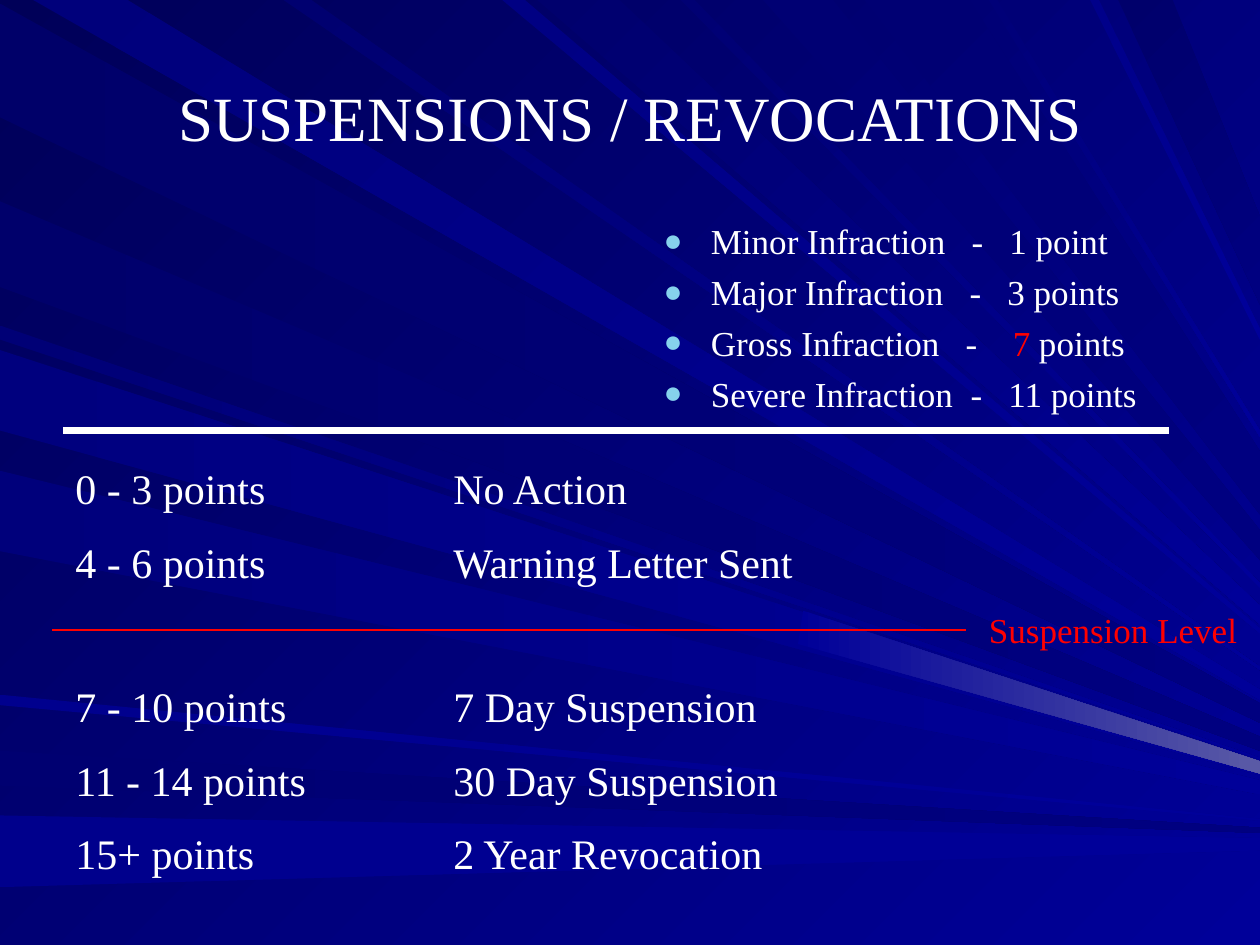
"""Build the suspensions and revocations slide on a blue light-ray background."""
from lxml import etree
from pptx import Presentation
from pptx.dml.color import RGBColor
from pptx.enum.shapes import MSO_CONNECTOR
from pptx.enum.text import MSO_ANCHOR, PP_ALIGN
from pptx.oxml.ns import qn
from pptx.util import Pt

STRAIGHT = MSO_CONNECTOR.STRAIGHT
CENTER, LEFT = PP_ALIGN.CENTER, PP_ALIGN.LEFT
MIDDLE, TOP = MSO_ANCHOR.MIDDLE, MSO_ANCHOR.TOP

THEME = {
    "font": "Times New Roman",
    "text": "FFFFFF", "alert": "FF0000", "bullet": "86D1EC",
    "night": "000058", "navy": "000080", "blue": "000099", "glow": "5A5AA6",
    "title_size": 36, "row_size": 24, "list_size": 20,
}
WIDTH, HEIGHT = 720, 540
FOCUS_X, FOCUS_Y = 864, 482

TOP_RAYS = [
    (19, 73, "00007B", "blue"), (162, 178, "000070", "blue"),
    (287, 300, "000083", "blue"), (307, 354, "00006D", "blue"),
    (389, 397, "000073", "blue"), (436, 476, "000073", "navy"),
    (494, 554, "000073", "navy"), (565, 570, "000078", "blue"),
    (623, 628, "00008A", "blue"), (639, 670, "00006B", "navy"),
]
LEFT_RAYS = [
    (2, 67, "000069", "navy"), (115, 164, "00006B", "navy"),
    (186, 194, "000076", "blue"), (200, 246, "00007E", "blue"),
    (269, 315, "00007B", "blue"), (397, 403, "00008E", "blue"),
    (429, 449, "000071", "navy"), (466, 507, "00008C", "blue"),
]
INFRACTIONS = [
    ("Minor Infraction   -   1 point",),
    ("Major Infraction   -   3 points",),
    ("Gross Infraction   -    ", "7", " points"),
    ("Severe Infraction  -   11 points",),
]
PENALTIES = [
    ("0 - 3 points", "No Action", 0),
    ("4 - 6 points", "Warning Letter Sent", 13.3),
    ("7 - 10 points", "7 Day Suspension", 53.7),
    ("11 - 14 points", "30 Day Suspension", 13.3),
    ("15+ points", "2 Year Revocation", 13.3),
]
DIVIDERS = [(36, 668, 246, "text", 4.5), (30, 552, 360, "alert", 1.5)]


def paint(fill, start, end, angle):
    fill.gradient()
    fill.gradient_angle = (360 - angle) % 360
    for stop, color in zip(fill.gradient_stops, (start, end)):
        stop.color.rgb = RGBColor.from_string(color)


def style(paragraph, size, color="text", align=LEFT, before=0):
    paragraph.alignment = align
    paragraph.space_before = Pt(before)
    paragraph.font.name = THEME["font"]
    paragraph.font.size = Pt(THEME[size])
    paragraph.font.color.rgb = RGBColor.from_string(THEME[color])


prs = Presentation()
prs.slide_width, prs.slide_height = Pt(WIDTH), Pt(HEIGHT)
slide = prs.slides.add_slide(prs.slide_layouts[1])
shapes = slide.shapes
heading, infractions = slide.placeholders
paint(slide.background.fill, THEME["night"], THEME["blue"], 45)

beams = [([(0, low), (0, high)], start, end, 0) for low, high, start, end in LEFT_RAYS]
beams += [([(low, 0), (high, 0)], start, end, 45) for low, high, start, end in TOP_RAYS]
beams.append(([(456, 368), (459, 349)], THEME["blue"], "glow", 0))

for (near, far), start, end, angle in beams:
    exits = []
    for x, y in (far, near):
        reach = (WIDTH - x) / (FOCUS_X - x)
        exits.append((WIDTH, y + (FOCUS_Y - y) * reach))
    outline = shapes.build_freeform(*near, scale=Pt(1))
    outline.add_line_segments([far, *exits])
    ray = outline.convert_to_shape()
    ray.shadow.inherit = False
    ray.line.fill.background()
    paint(ray.fill, start, THEME[end], angle)

for placeholder, box, anchor in (
    (heading, (36, 21.6, 648, 90), MIDDLE),
    (infractions, (372, 122, 306, 114), TOP),
):
    shapes._spTree.append(placeholder._element)
    placeholder.left, placeholder.top, placeholder.width, placeholder.height = map(Pt, box)
    placeholder.text_frame.vertical_anchor = anchor

heading.text_frame.text = "SUSPENSIONS / REVOCATIONS"
style(heading.text_frame.paragraphs[0], "title_size", align=CENTER)

for index, parts in enumerate(INFRACTIONS):
    frame = infractions.text_frame
    infraction = frame.add_paragraph() if index else frame.paragraphs[0]
    for part in parts:
        run = infraction.add_run()
        run.text = part
        if part == "7":
            run.font.color.rgb = RGBColor.from_string(THEME["alert"])
    style(infraction, "list_size", before=5 if index else 0)
    props = infraction._p.get_or_add_pPr()
    props.set("marL", str(Pt(27)))
    props.set("indent", str(-Pt(27)))
    bullet_color = etree.SubElement(props, qn("a:buClr"))
    etree.SubElement(bullet_color, qn("a:srgbClr"), val=THEME["bullet"])
    etree.SubElement(props, qn("a:buSzPct"), val="90000")
    etree.SubElement(props, qn("a:buFont"), typeface=THEME["font"])
    etree.SubElement(props, qn("a:buChar"), char="●")

penalties = shapes.add_textbox(Pt(36), Pt(260.7), Pt(438), Pt(277)).text_frame
penalties.word_wrap = True
for index, (score, action, gap) in enumerate(PENALTIES):
    penalty = penalties.add_paragraph() if index else penalties.paragraphs[0]
    penalty.text = f"{score}\t{action}"
    style(penalty, "row_size", before=gap)
    tabs = etree.SubElement(penalty._p.get_or_add_pPr(), qn("a:tabLst"))
    etree.SubElement(tabs, qn("a:tab"), pos=str(Pt(216)), algn="l")

for left, right, y, color, weight in DIVIDERS:
    divider = shapes.add_connector(STRAIGHT, Pt(left), Pt(y), Pt(right), Pt(y))
    divider.line.color.rgb = RGBColor.from_string(THEME[color])
    divider.line.width = Pt(weight)
    etree.SubElement(divider._element.spPr, qn("a:effectLst"))

threshold = shapes.add_textbox(Pt(558), Pt(344.2), Pt(159), Pt(31.5)).text_frame
threshold.word_wrap = False
threshold.text = "Suspension Level"
style(threshold.paragraphs[0], "list_size", color="alert")

prs.save("out.pptx")
